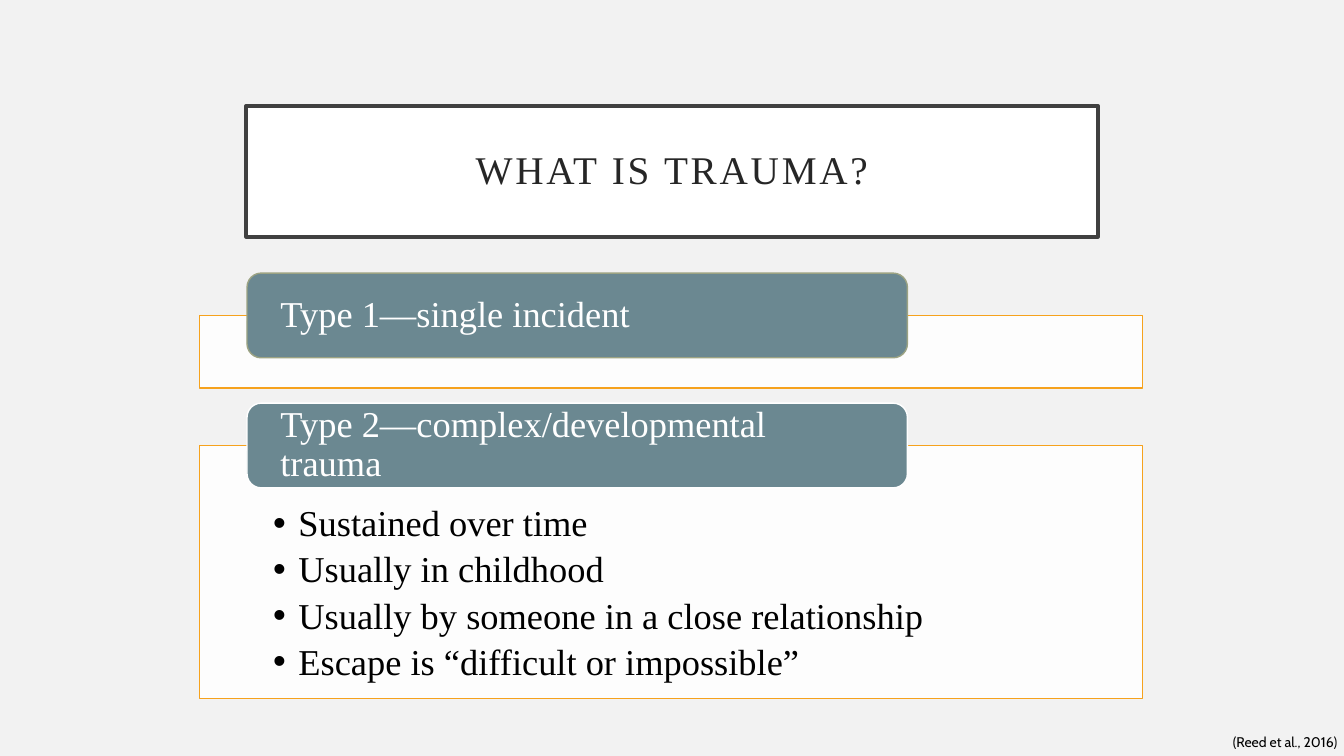
from dataclasses import dataclass

from lxml.etree import SubElement
from pptx import Presentation
from pptx.dml.color import RGBColor
from pptx.enum.shapes import MSO_SHAPE as Shape
from pptx.enum.text import MSO_ANCHOR as Anchor, MSO_AUTO_SIZE as AutoSize, PP_ALIGN as Align
from pptx.oxml.ns import qn
from pptx.util import Inches, Pt


@dataclass(frozen=True)
class Theme:
    font: str = "Times New Roman"
    source_font: str = "Cabin"
    background: str = "F2F2F2"
    white: str = "FFFFFF"
    black: str = "000000"
    title_text: str = "262626"
    title_line: str = "404040"
    panel_line: str = "F6A21D"
    label: str = "6B8891"
    label_line: str = "9CA383"
    title_size: float = 28
    body_size: float = 26
    source_size: float = 10


T = Theme()
BULLETS = [
    "Sustained over time",
    "Usually in childhood",
    "Usually by someone in a close relationship",
    "Escape is “difficult or impossible”",
]


def rgb(color):
    return RGBColor.from_string(color)


def place(sp, x, y, w, h):
    sp.left, sp.top, sp.width, sp.height = (Inches(v) for v in (x, y, w, h))


def style(sp, fill, line, width=1, alpha=None):
    sp.fill.solid()
    sp.fill.fore_color.rgb = rgb(fill)
    sp.line.color.rgb = rgb(line)
    sp.line.width = Pt(width)
    if alpha is not None:
        color = sp.fill._xPr.find(".//" + qn("a:srgbClr"))
        SubElement(color, qn("a:alpha"), val=str(alpha * 1000))


def set_frame(tf, insets, anchor=Anchor.TOP, wrap=True, auto_size=AutoSize.NONE):
    """Set the frame; insets are left, top, right and bottom in inches."""
    tf.auto_size = auto_size
    tf.word_wrap = wrap
    tf.vertical_anchor = anchor
    tf.margin_left, tf.margin_top, tf.margin_right, tf.margin_bottom = map(Inches, insets)


def write(p, text, size=T.body_size, color=T.black, font=T.font, align=Align.LEFT,
          line_spacing=0.9, after=0, tracking=None, bullet=None):
    p.alignment = align
    p.line_spacing = line_spacing
    p.space_before, p.space_after = Pt(0), Pt(after)
    r = p.add_run()
    r.text = text
    r.font.size, r.font.name = Pt(size), font
    r.font.color.rgb = rgb(color)
    if tracking:
        r._r.get_or_add_rPr().set("spc", str(tracking * 100))
    if bullet:
        pPr = p._p.get_or_add_pPr()
        pPr.set("marL", str(Inches(0.25)))
        pPr.set("indent", str(Inches(-0.25)))
        SubElement(pPr, qn("a:buChar"), char=bullet)


def add_title(s, x, y, w, h):
    sp = s.shapes.title
    place(sp, x, y, w, h)
    style(sp, T.white, T.title_line, 2.5)
    set_frame(sp.text_frame, [0.2] * 4, Anchor.MIDDLE)
    write(sp.text_frame.paragraphs[0], "WHAT IS TRAUMA?", size=T.title_size,
          color=T.title_text, align=Align.CENTER, tracking=2)


def add_label(s, text, line, x, y):
    """Add the rounded heading that straddles the top edge of a panel at x, y."""
    sp = s.shapes.add_shape(Shape.ROUNDED_RECTANGLE, Inches(x + 0.47), Inches(y - 0.42),
                            Inches(6.55), Inches(0.84))
    sp.shadow.inherit = False
    style(sp, T.label, line)
    set_frame(sp.text_frame, [0.29, 0, 0.29, 0], Anchor.MIDDLE)
    write(sp.text_frame.paragraphs[0], text, color=T.white)


def add_single_incident(s, x, y, w, h):
    panel = s.shapes.add_shape(Shape.RECTANGLE, *map(Inches, (x, y, w, h)))
    panel.shadow.inherit = False
    style(panel, T.white, T.panel_line, alpha=90)
    add_label(s, "Type 1—single incident", T.label_line, x, y)


def add_complex_trauma(s, x, y, w, h):
    panel = s.placeholders[1]
    place(panel, x, y, w, h)
    style(panel, T.white, T.panel_line, alpha=90)
    tf = panel.text_frame
    set_frame(tf, [0.73, 0.59, 0.73, 0.2])
    for i, text in enumerate(BULLETS):
        p = tf.add_paragraph() if i else tf.paragraphs[0]
        write(p, text, after=5, bullet="•")
    add_label(s, "Type 2—complex/developmental trauma", T.white, x, y)


def add_source(s, x, y, w, h):
    tf = s.shapes.add_textbox(*map(Inches, (x, y, w, h))).text_frame
    set_frame(tf, [0.1, 0.05, 0.1, 0.05], wrap=False, auto_size=AutoSize.SHAPE_TO_FIT_TEXT)
    write(tf.paragraphs[0], "(Reed et al., 2016)", size=T.source_size,
          font=T.source_font, line_spacing=1)


def main():
    prs = Presentation()
    prs.slide_width, prs.slide_height = Inches(13.33), Inches(7.5)
    s = prs.slides.add_slide(prs.slide_layouts[1])
    s.background.fill.solid()
    s.background.fill.fore_color.rgb = rgb(T.background)
    add_title(s, 2.44, 1.05, 8.45, 1.3)
    add_single_incident(s, 1.98, 3.13, 9.35, 0.72)
    add_complex_trauma(s, 1.98, 4.42, 9.35, 2.51)
    add_source(s, 12.13, 7.23, 1.25, 0.27)
    prs.save("out.pptx")


if __name__ == "__main__":
    main()
